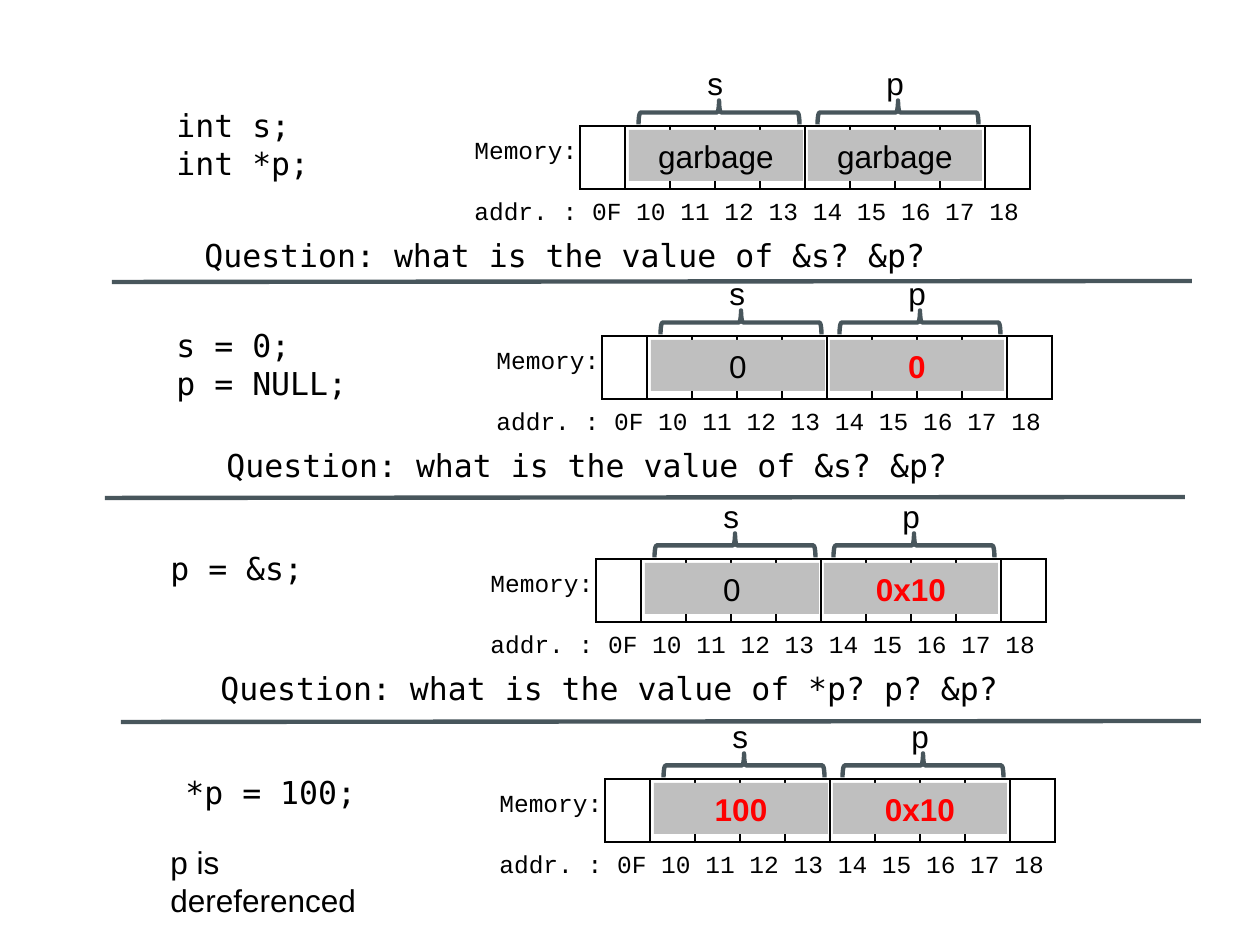
from lxml import etree
from pptx import Presentation
from pptx.dml.color import RGBColor
from pptx.enum import shapes, text
from pptx.oxml import ns, parse_xml
from pptx.util import Pt

PX = 914400 // 126
BLACK = RGBColor(0, 0, 0)
RED = RGBColor(0xFF, 0, 0)
GRAY = RGBColor(0xBF, 0xBF, 0xBF)
SLATE = RGBColor(0x48, 0x56, 0x5C)
SANS, MONO, CODE = "Arial", "Courier New", "DejaVu Sans Mono"
CELLS, CELL_W, ROW_H = 10, 45, 63
ADDR = "addr. : 0F 10 11 12 13 14 15 16 17 18"

# table corner, code lines, code box, values of s and p with their colours
STATES = [
    ((580, 126), ["int s;", "int *p;"], (164, 100, 159, 89),
     [("garbage", BLACK), ("garbage", BLACK)]),
    ((602, 336), ["s = 0;", "p = NULL;"], (164, 320, 198, 89),
     [("0", BLACK), ("0", RED)]),
    ((596, 559), ["p = &s;"], (158, 543, 159, 50),
     [("0", BLACK), ("0x10", RED)]),
    ((605, 779), ["*p = 100;"], (173, 767, 198, 89),
     [("100", RED), ("0x10", RED)]),
]
ASKS = [
    ("Question: what is the value of &s? &p?", 751),
    ("Question: what is the value of &s? &p?", 751),
    ("Question: what is the value of *p? p? &p?", 808),
]
RULES = [(112, 282), (105, 498), (121, 722)]


def emu(*nums):
    return [n * PX for n in nums]


def write(frame, lines, font, size=18, color=BLACK, gap=0):
    """Fill a text frame; gap is the space between paragraphs in points."""
    for i, line in enumerate(lines):
        para = frame.paragraphs[0] if i == 0 else frame.add_paragraph()
        para.text = line
        para.font.name = font
        para.font.size = Pt(size)
        para.font.color.rgb = color
        if i and gap:
            para.space_before = Pt(gap)


def add_text(slide, box, lines, font, size=18, gap=0, wrap=False):
    frame = slide.shapes.add_textbox(*emu(*box)).text_frame
    frame.word_wrap = wrap
    write(frame, lines, font, size, gap=gap)


def add_rule(slide, x, y):
    line = slide.shapes.add_connector(
        shapes.MSO_CONNECTOR.STRAIGHT, *emu(x, y, x + 1080, y - 1))
    line.line.color.rgb = SLATE
    line.line.width = Pt(2.5)
    etree.SubElement(line._element.spPr, ns.qn("a:effectLst"))


def add_border(cell):
    props = cell._tc.get_or_add_tcPr()
    for i, side in enumerate(("lnL", "lnR", "lnT", "lnB")):
        props.insert(i, parse_xml(
            f'<a:{side} {ns.nsdecls("a")} w="12700"><a:solidFill>'
            f'<a:srgbClr val="{BLACK}"/></a:solidFill></a:{side}>'))


def add_cells(slide, x, y):
    table = slide.shapes.add_table(
        1, CELLS, *emu(x, y, CELLS * CELL_W, ROW_H)).table
    table.first_row = table.horz_banding = False
    for cell in table.iter_cells():
        cell.fill.background()
        add_border(cell)


def add_var(slide, x, y, name, value, color):
    """Value block with a brace and the variable's name above it."""
    block = slide.shapes.add_shape(
        shapes.MSO_SHAPE.RECTANGLE, *emu(x, y, 174, 51))
    block.shadow.inherit = False
    block.fill.solid()
    block.fill.fore_color.rgb = GRAY
    block.line.fill.background()
    frame = block.text_frame
    frame.vertical_anchor = text.MSO_ANCHOR.MIDDLE
    write(frame, [value], SANS, color=color)
    frame.paragraphs[0].alignment = text.PP_ALIGN.CENTER
    frame.paragraphs[0].font.bold = color == RED

    brace = slide.shapes.add_shape(
        shapes.MSO_SHAPE.LEFT_BRACE, *emu(x + 78, y - 98, 24, 161))
    brace.rotation = 90
    brace.shadow.inherit = False
    brace.fill.background()
    brace.line.color.rgb = SLATE
    brace.line.width = Pt(2.5)
    add_text(slide, (x + 66, y - 72, 40, 50), [name], SANS)


def add_memory(slide, x, y, values):
    add_text(slide, (x - 118, y + 3, 573, 102), ["Memory:", ADDR],
             MONO, 14, gap=18)
    add_cells(slide, x, y)
    for i, (name, (value, color)) in enumerate(zip("sp", values)):
        add_var(slide, x + 49 + 179 * i, y + 4, name, value, color)


def main():
    deck = Presentation()
    deck.slide_width, deck.slide_height = emu(1260, 945)
    slide = deck.slides.add_slide(deck.slide_layouts[6])
    for (x, y), code, box, values in STATES:
        add_text(slide, box, code, CODE)
        add_memory(slide, x, y, values)
    for ((x, y), *_), (ask, width) in zip(STATES, ASKS):
        add_text(slide, (x - 388, y + 104, width, 50), [ask], CODE)
    for x, y in RULES:
        add_rule(slide, x, y)
    add_text(slide, (158, 837, 252, 50), ["p is dereferenced"], SANS,
             wrap=True)
    deck.save("out.pptx")


if __name__ == "__main__":
    main()
